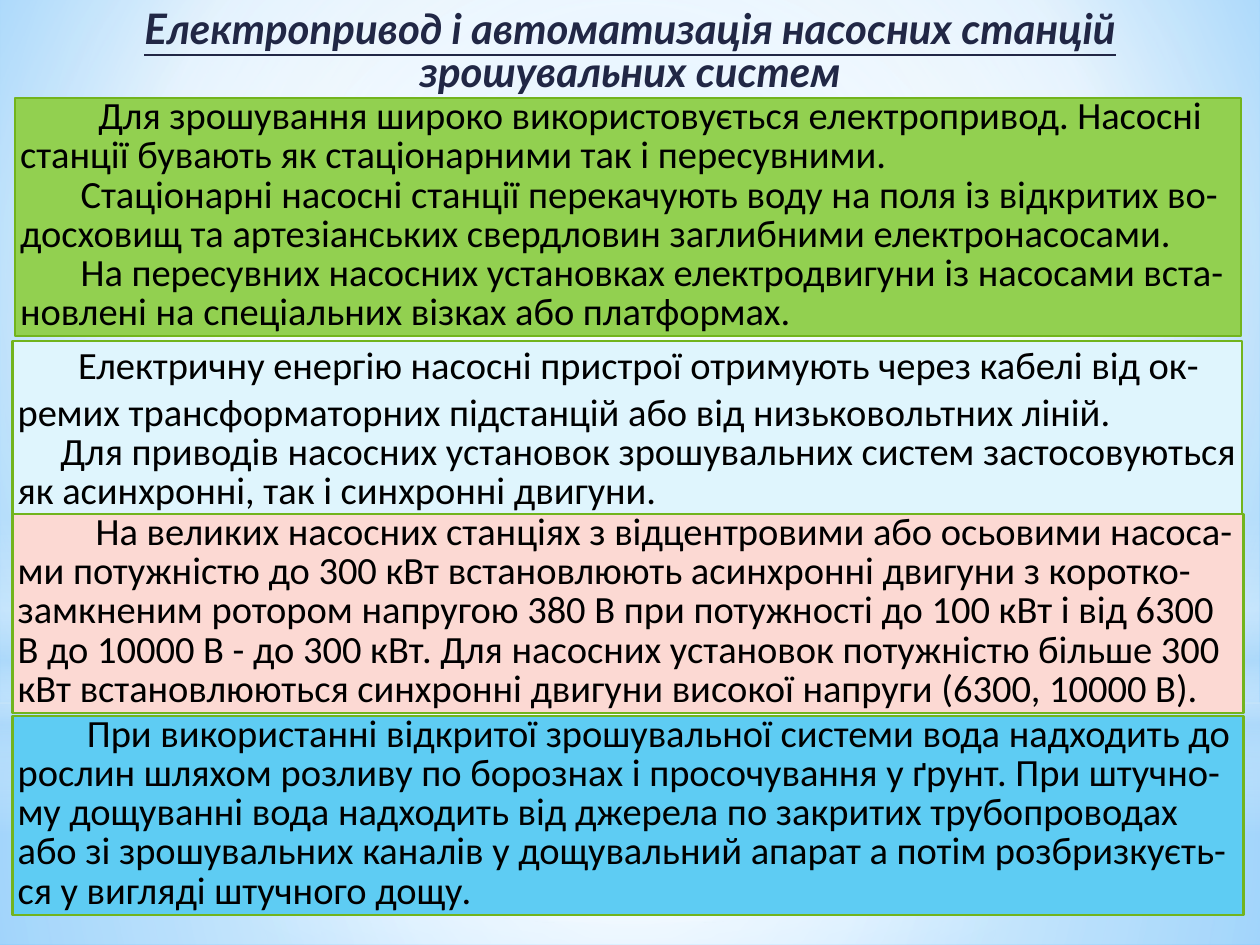
"""Build the slide on electric drives for irrigation pumping stations."""
from dataclasses import dataclass

import lxml.etree
import pptx
import pptx.dml.color
import pptx.enum.shapes
import pptx.enum.text
import pptx.oxml.ns
import pptx.util

Inches = pptx.util.Inches
Pt = pptx.util.Pt
RGB = pptx.dml.color.RGBColor.from_string
qn = pptx.oxml.ns.qn
SHAPES = pptx.enum.shapes.MSO_SHAPE
ALIGN = pptx.enum.text.PP_ALIGN


@dataclass(frozen=True)
class Theme:
    title_font: str = "Lato"
    body_font: str = "Calibri"
    title_size: int = 24
    body_size: int = 22
    title: str = "212745"
    body: str = "000000"
    border: str = "72B41D"
    border_width: float = 1.25
    spacing: float = 0.85
    green: str = "92D050"
    pale_blue: str = "DFF5FD"
    pink: str = "FCD9D3"
    blue: str = "5ECCF3"
    white: str = "FFFFFF"
    haze: str = "B4DCFA"
    sky: str = "9ED5FF"
    deep_sky: str = "5BB9FF"


THEME = Theme()
CENTRE = (50, 50, 50, 50)

BACKGROUND = [(0, THEME.sky, 100), (60, THEME.white, 100), (100, THEME.deep_sky, 100)]

GLOWS = [
    (SHAPES.RECTANGLE, (0, 5.58, 10, 1.92), CENTRE,
     [(0, THEME.white, 91), (37, THEME.white, 76), (100, THEME.haze, 79)]),
    (SHAPES.RECTANGLE, (0, 0, 10, 5.58), CENTRE,
     [(0, THEME.white, 89), (48, THEME.white, 62), (100, THEME.haze, 79)]),
    (SHAPES.RECTANGLE, (0, 4.12, 10, 2.5), None,
     [(0, THEME.white, 0), (29, THEME.white, 30), (45, THEME.haze, 40),
      (55, THEME.white, 26), (65, THEME.haze, 60), (100, THEME.white, 0)]),
    (SHAPES.OVAL, (0, 1.75, 10, 5.58), CENTRE,
     [(0, THEME.white, 100), (56, THEME.white, 0)]),
]

TITLE = "Електропривод і автоматизація насосних станцій зрошувальних систем"

PANELS = [
    (THEME.green, (0.12, 0.78, 9.73, 1.89), [
        (0.62, THEME.spacing, "Для зрошування широко використовується електропривод. Насосні "
         "станції бувають як стаціонарними так і пересувними."),
        (0.48, THEME.spacing, "Стаціонарні насосні станції перекачують воду на поля із відкритих "
         "во-досховищ та артезіанських свердловин заглибними електронасосами."),
        (0.48, THEME.spacing, "На пересувних насосних установках електродвигуни із насосами "
         "вста-новлені на спеціальних візках або платформах."),
    ]),
    (THEME.pale_blue, (0.1, 2.71, 9.76, 1.37), [
        (0.48, 1.0, "Електричну енергію насосні пристрої отримують через кабелі від "
         "ок-ремих трансформаторних підстанцій або від низьковольтних ліній."),
        (0.34, THEME.spacing, "Для приводів насосних установок зрошувальних систем "
         "застосовуються як асинхронні, так і синхронні двигуни."),
    ]),
    (THEME.pink, (0.1, 4.08, 9.77, 1.58), [
        (0.62, THEME.spacing, "На великих насосних станціях з відцентровими або осьовими "
         "насоса-ми потужністю до 300 кВт встановлюють асинхронні двигуни з "
         "коротко-замкненим ротором напругою 380 В при потужності до 100 кВт і від 6300 В "
         "до 10000 В - до 300 кВт. Для насосних установок потужністю більше 300 кВт "
         "встановлюються синхронні двигуни високої напруги (6300, 10000 В)."),
    ]),
    (THEME.blue, (0.1, 5.68, 9.77, 1.58), [
        (0.55, THEME.spacing, "При використанні відкритої зрошувальної системи вода надходить до "
         "рослин шляхом розливу по борознах і просочування у ґрунт. При штучно-му дощуванні "
         "вода надходить від джерела по закритих трубопроводах або зі зрошувальних каналів "
         "у дощувальний апарат а потім розбризкуєть-ся у вигляді штучного дощу."),
    ]),
]


def apply_format(target, values):
    """Set every attribute named in a dict."""
    for name, value in values.items():
        setattr(target, name, value)


def paint_gradient(fill, element, stops, focus):
    """Fill with translucent stops, circular around a focus or else downwards."""
    fill.gradient()
    gradient = next(element.iter(qn("a:gradFill")))
    for child in list(gradient):
        gradient.remove(child)
    add = lxml.etree.SubElement
    stop_list = add(gradient, qn("a:gsLst"))
    for position, color, alpha in stops:
        stop = add(stop_list, qn("a:gs"), pos=str(position * 1000))
        tint = add(stop, qn("a:srgbClr"), val=color)
        if alpha < 100:
            add(tint, qn("a:alpha"), val=str(alpha * 1000))
    if focus:
        circle = add(gradient, qn("a:path"), path="circle")
        sides = {side: str(value * 1000) for side, value in zip("ltrb", focus)}
        add(circle, qn("a:fillToRect"), **sides)
    else:
        add(gradient, qn("a:lin"), ang="5400000", scaled="0")


def add_shape(page, kind, place):
    """Add a preset shape without a shadow."""
    shape = page.shapes.add_shape(kind, *map(Inches, place))
    shape.shadow.inherit = False
    return shape


def add_glow(page, kind, place, focus, stops):
    """Add one soft layer of the backdrop."""
    glow = add_shape(page, kind, place)
    glow.line.fill.background()
    paint_gradient(glow.fill, glow.element, stops, focus)


def format_frame(frame, side_margin):
    """Make a wrapping text frame that grows with its text."""
    apply_format(frame, {
        "word_wrap": True,
        "auto_size": pptx.enum.text.MSO_AUTO_SIZE.SHAPE_TO_FIT_TEXT,
        "vertical_anchor": pptx.enum.text.MSO_ANCHOR.TOP,
        "margin_left": Inches(side_margin),
        "margin_right": Inches(side_margin),
        "margin_top": 0,
        "margin_bottom": 0,
    })


def write_paragraph(para, text, layout, font, color):
    """Write one formatted paragraph."""
    apply_format(para, {"space_before": Pt(0), "space_after": Pt(0), **layout})
    span = para.add_run()
    span.text = text
    apply_format(span.font, font)
    span.font.color.rgb = RGB(color)


def add_title(page):
    """Place the title above the backdrop."""
    box = page.shapes.title
    page.shapes.element.append(box.element)
    left, top, width, height = map(Inches, (0.12, 0.08, 9.76, 0.69))
    apply_format(box, {"left": left, "top": top, "width": width, "height": height})
    format_frame(box.text_frame, 0)
    font = {"name": THEME.title_font, "size": Pt(THEME.title_size),
            "bold": True, "italic": True, "underline": True}
    layout = {"alignment": ALIGN.CENTER, "line_spacing": THEME.spacing}
    write_paragraph(box.text_frame.paragraphs[0], TITLE, layout, font, THEME.title)


def add_panel(page, color, place, paragraphs):
    """Add a coloured panel with first-line indented paragraphs."""
    box = add_shape(page, SHAPES.RECTANGLE, place)
    box.fill.solid()
    box.fill.fore_color.rgb = RGB(color)
    box.line.color.rgb = RGB(THEME.border)
    box.line.width = Pt(THEME.border_width)
    frame = box.text_frame
    format_frame(frame, 0.04)
    font = {"name": THEME.body_font, "size": Pt(THEME.body_size)}
    for number, (indent, spacing, text) in enumerate(paragraphs):
        para = frame.add_paragraph() if number else frame.paragraphs[0]
        layout = {"alignment": ALIGN.LEFT, "line_spacing": spacing}
        write_paragraph(para, text, layout, font, THEME.body)
        apply_indent = para._p.get_or_add_pPr()
        apply_indent.set("marL", "0")
        apply_indent.set("indent", str(Inches(indent)))


def main():
    """Build and save the deck."""
    deck = pptx.Presentation()
    apply_format(deck, {"slide_width": Inches(10), "slide_height": Inches(7.5)})
    page = deck.slides.add_slide(deck.slide_layouts.get_by_name("Title Only"))
    paint_gradient(page.background.fill, page.element, BACKGROUND, (20, 10, 20, 60))
    for kind, place, focus, stops in GLOWS:
        add_glow(page, kind, place, focus, stops)
    add_title(page)
    for color, place, paragraphs in PANELS:
        add_panel(page, color, place, paragraphs)
    deck.save("out.pptx")


if __name__ == "__main__":
    main()
